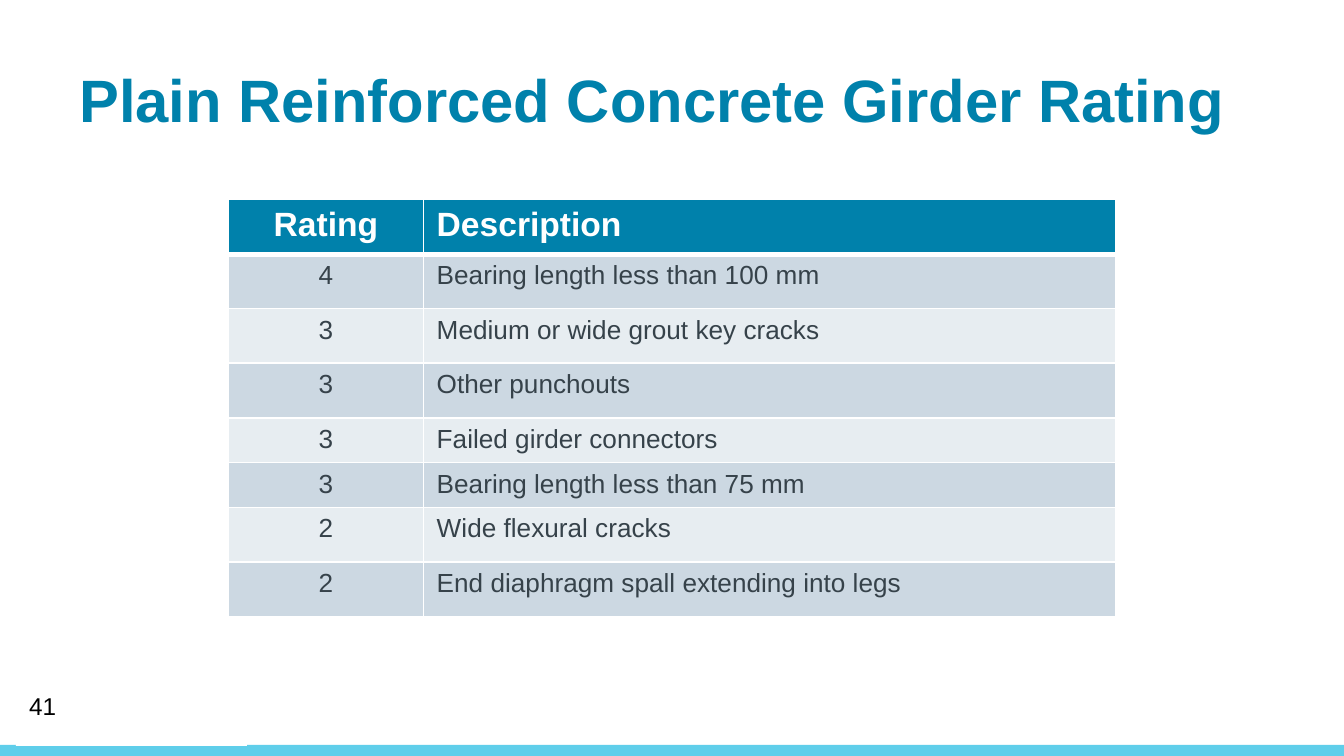
from pptx import Presentation
from pptx.dml.color import RGBColor
from pptx.enum.shapes import MSO_SHAPE as SHAPE
from pptx.enum.text import MSO_ANCHOR as ANCHOR, MSO_AUTO_SIZE as AUTO, PP_ALIGN as ALIGN
from pptx.oxml.ns import qn
from pptx.util import Cm, Pt
from lxml.etree import SubElement

# Content
TITLE = "Plain Reinforced Concrete Girder Rating"
PAGE = "41"
HEADER = ("Rating", "Description")
RATINGS = [
    ("4", "Bearing length less than 100 mm"),
    ("3", "Medium or wide grout key cracks"),
    ("3", "Other punchouts"),
    ("3", "Failed girder connectors"),
    ("3", "Bearing length less than 75 mm"),
    ("2", "Wide flexural cracks"),
    ("2", "End diaphragm spall extending into legs"),
]
COLORS = {
    "title": "0081AB", "text": "36424A", "odd": "CCD8E2", "even": "E7EDF1",
    "bar": "5FCEEA", "white": "FFFFFF", "black": "000000",
}
FONT = "Arial"
COL_WIDTHS = (3.68, 13.08)
TALL, SHORT = 1.03, 0.81
SHORT_ROWS = (4, 5)


def rgb(name):
    return RGBColor.from_string(COLORS[name])


def write(tf, text, size, color, bold=False, align=ALIGN.LEFT):
    tf.text = text
    p = tf.paragraphs[0]
    p.alignment = align
    font = p.runs[0].font
    font.name, font.size, font.bold = FONT, Pt(size), bold
    font.color.rgb = rgb(color)


def add_bar(slide, color, *box):
    sp = slide.shapes.add_shape(SHAPE.RECTANGLE, *map(Cm, box))
    sp.shadow.inherit = False
    sp.fill.solid()
    sp.fill.fore_color.rgb = rgb(color)
    sp.line.fill.background()


def set_cell(cell, fill, bottom):
    cell.fill.solid()
    cell.fill.fore_color.rgb = rgb(fill)
    tcPr = cell._tc.get_or_add_tcPr()
    widths = (("a:lnL", 1), ("a:lnR", 1), ("a:lnT", 1), ("a:lnB", bottom))
    for i, (tag, width) in enumerate(widths):
        ln = SubElement(tcPr, qn(tag), w=str(Pt(width)))
        solid = SubElement(ln, qn("a:solidFill"))
        SubElement(solid, qn("a:srgbClr"), val=COLORS["white"])
        tcPr.insert(i, ln)  # borders come before the fill


prs = Presentation()
prs.slide_width, prs.slide_height = Cm(25.4), Cm(14.28)
slide = prs.slides.add_slide(prs.slide_layouts[5])

# Footer bar and page number
add_bar(slide, "bar", 0, 14.07, 25.4, 0.21)
add_bar(slide, "white", 0.3, 13.77, 4.37, 0.32)
number = slide.shapes.add_textbox(Cm(0.3), Cm(12.95), Cm(5.72), Cm(0.76))
number.text_frame.word_wrap = True
number.text_frame.vertical_anchor = ANCHOR.MIDDLE
write(number.text_frame, PAGE, 13, "black")

# Rating table
rows = [HEADER] + RATINGS
heights = [SHORT if i in SHORT_ROWS else TALL for i in range(len(rows))]
frame = slide.shapes.add_table(len(rows), len(HEADER), Cm(4.32), Cm(3.77),
                               Cm(sum(COL_WIDTHS)), Cm(sum(heights)))
table = frame.table
for column, width in zip(table.columns, COL_WIDTHS):
    column.width = Cm(width)
for i, (row, height) in enumerate(zip(rows, heights)):
    table.rows[i].height = Cm(height)
    head = i == 0
    fill = "title" if head else "odd" if i % 2 else "even"
    for j, text in enumerate(row):
        cell = table.cell(i, j)
        write(cell.text_frame, text, 18 if head else 14,
              "white" if head else "text", head,
              ALIGN.LEFT if j else ALIGN.CENTER)
        set_cell(cell, fill, 3 if head else 1)
        if i == 1:  # shares the thick rule under the header
            cell._tc.tcPr.find(qn("a:lnT")).set("w", str(Pt(3)))

# Title
title = slide.shapes.title
title.left, title.top, title.width, title.height = map(Cm, (1.5, 0.94, 22.83, 1.45))
tf = title.text_frame
tf.word_wrap = True
tf.auto_size = AUTO.NONE
tf.vertical_anchor = ANCHOR.TOP
tf.margin_left, tf.margin_top = 0, Cm(0.25)
write(tf, TITLE, 32, "title", True)

prs.save("out.pptx")
